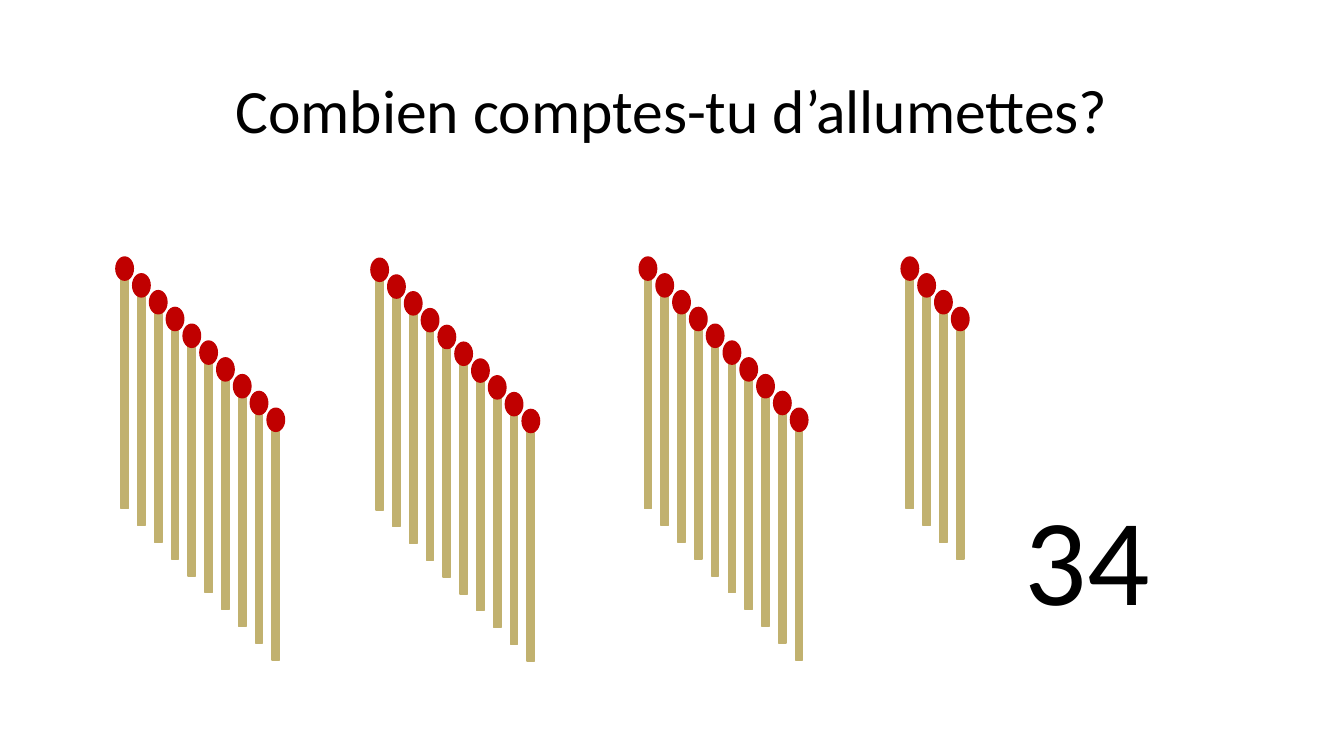
import dataclasses

import pptx
import pptx.dml.color
import pptx.enum.shapes
import pptx.enum.text
import pptx.util


@dataclasses.dataclass(frozen=True)
class Theme:
    font: str = "Calibri"
    text: str = "000000"
    wood: str = "C1B16F"
    tip: str = "C00000"
    title_size: int = 44
    answer_size: int = 88
    outline: int = 1


def color(value):
    return pptx.dml.color.RGBColor.from_string(value)


def write_text(frame, text, *, size, font, fill,
               align=pptx.enum.text.PP_ALIGN.LEFT,
               anchor=pptx.enum.text.MSO_ANCHOR.TOP,
               autosize=pptx.enum.text.MSO_AUTO_SIZE.NONE,
               spacing=1.0):
    frame.word_wrap = True
    frame.auto_size = autosize
    frame.vertical_anchor = anchor
    paragraph = frame.paragraphs[0]
    paragraph.alignment = align
    paragraph.line_spacing = spacing
    run = paragraph.add_run()
    run.text = text
    run.font.size = pptx.util.Pt(size)
    run.font.name = font
    run.font.color.rgb = color(fill)


class MatchSlide:
    COLUMNS = 80
    ROWS = 45

    def __init__(self, presentation, theme):
        self.theme = theme
        self.column = presentation.slide_width / self.COLUMNS
        self.row = presentation.slide_height / self.ROWS
        self.slide = presentation.slides.add_slide(presentation.slide_layouts[5])

    def box(self, column, row, columns, rows):
        return (round(column * self.column), round(row * self.row),
                round(columns * self.column), round(rows * self.row))

    def title(self, text, *place):
        shape = self.slide.shapes.title
        shape.left, shape.top, shape.width, shape.height = self.box(*place)
        write_text(shape.text_frame, text, size=self.theme.title_size,
                   font=self.theme.font, fill=self.theme.text,
                   align=pptx.enum.text.PP_ALIGN.CENTER,
                   anchor=pptx.enum.text.MSO_ANCHOR.MIDDLE, spacing=0.9)

    def answer(self, text, *place):
        shape = self.slide.shapes.add_textbox(*self.box(*place))
        write_text(shape.text_frame, text, size=self.theme.answer_size,
                   font=self.theme.font, fill=self.theme.text,
                   autosize=pptx.enum.text.MSO_AUTO_SIZE.SHAPE_TO_FIT_TEXT)

    def solid(self, group, kind, fill, *place):
        shape = group.shapes.add_shape(kind, *self.box(*place))
        shape.shadow.inherit = False
        shape.fill.solid()
        shape.fill.fore_color.rgb = color(fill)
        shape.line.color.rgb = color(fill)
        shape.line.width = pptx.util.Pt(self.theme.outline)

    def match(self, column, row):
        kinds = pptx.enum.shapes.MSO_SHAPE
        group = self.slide.shapes.add_group_shape()
        self.solid(group, kinds.RECTANGLE, self.theme.wood,
                   column + 0.3, row + 1.12, 0.44, 13.86)
        self.solid(group, kinds.OVAL, self.theme.tip, column, row, 1.04, 1.38)

    def bundle(self, column, row, count):
        for step in range(count):
            self.match(column + step, row + step)


def main():
    presentation = pptx.Presentation()
    presentation.slide_width = pptx.util.Inches(13.33)
    presentation.slide_height = pptx.util.Inches(7.5)

    page = MatchSlide(presentation, Theme())
    page.title("Combien comptes-tu d’allumettes?", 5.5, 2.4, 69, 8.7)
    bundles = [(6.9, 15.3, 10), (22.08, 15.37, 10), (38.05, 15.3, 10), (53.64, 15.3, 4)]
    for column, row, count in bundles:
        page.bundle(column, row, count)
    page.answer("34", 60.42, 28.44, 13.62, 9.48)

    presentation.save("out.pptx")


if __name__ == "__main__":
    main()
